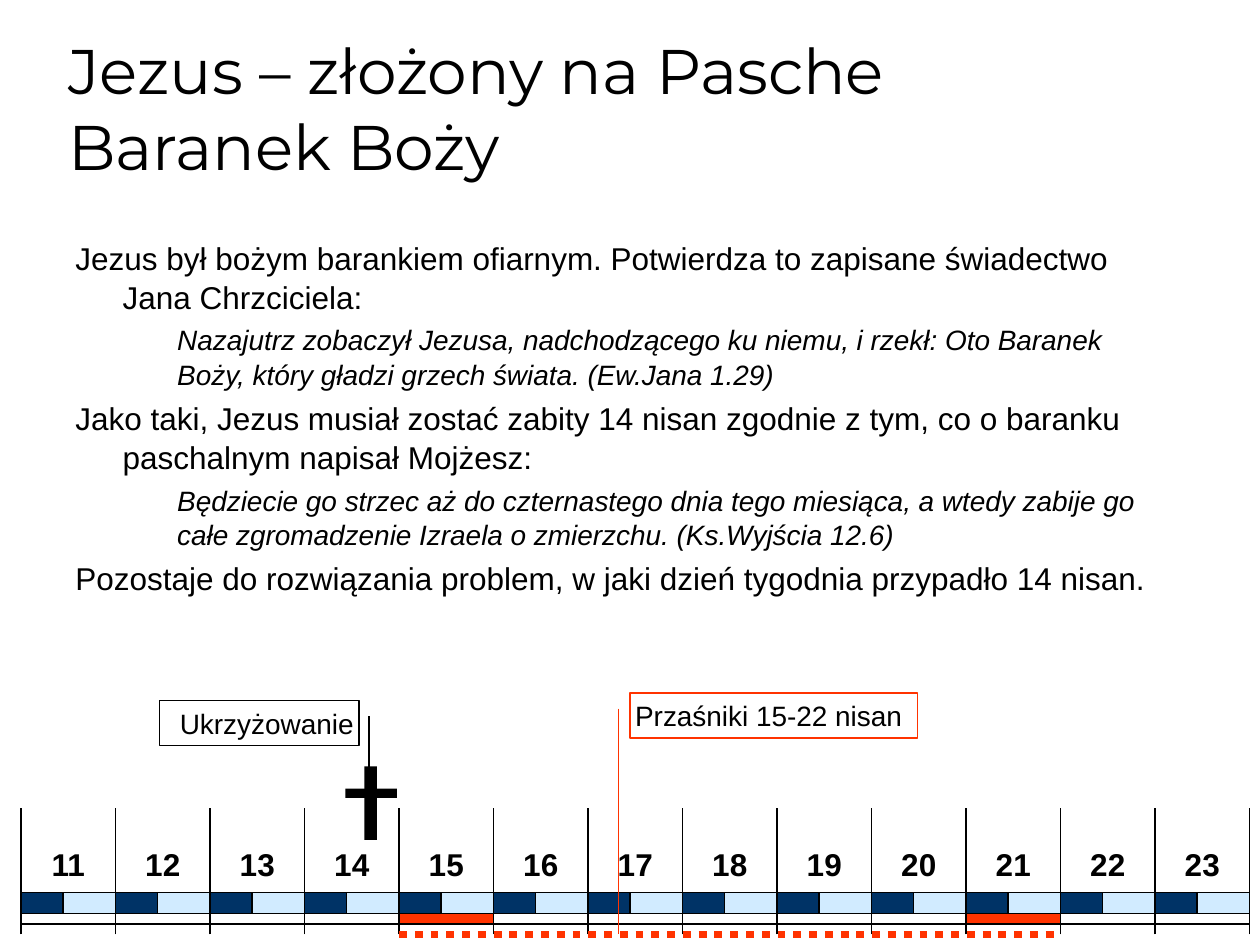
import pptx
import pptx.util
import pptx.dml.color
import pptx.enum.dml
import pptx.enum.shapes
import pptx.enum.text
import pptx.oxml

BLACK = pptx.dml.color.RGBColor(0x00, 0x00, 0x00)
NIGHT = pptx.dml.color.RGBColor(0x00, 0x33, 0x66)
DAYLIGHT = pptx.dml.color.RGBColor(0xD1, 0xEB, 0xFF)
RED = pptx.dml.color.RGBColor(0xFF, 0x33, 0x00)

ALIGN = pptx.enum.text.PP_ALIGN
ANCHOR = pptx.enum.text.MSO_ANCHOR
SHAPE = pptx.enum.shapes.MSO_SHAPE

EMU_PER_PX = 7620  # 120 px to the inch
DAY_WIDTH = 90
NIGHT_WIDTH = 40
CALENDAR_LEFT = 20
CALENDAR_BOTTOM = 890
FIRST_DAY, LAST_DAY = 11, 23
FEAST_START, FEAST_END = 15, 21

TITLE = "Jezus – złożony na Pasche Baranek Boży"
STATEMENTS = [
    ("Jezus był bożym barankiem ofiarnym. Potwierdza to zapisane świadectwo "
     "Jana Chrzciciela:", False),
    ("Nazajutrz zobaczył Jezusa, nadchodzącego ku niemu, i rzekł: Oto Baranek "
     "Boży, który gładzi grzech świata. (Ew.Jana 1.29)", True),
    ("Jako taki, Jezus musiał zostać zabity 14 nisan zgodnie z tym, co o baranku "
     "paschalnym napisał Mojżesz:", False),
    ("Będziecie go strzec aż do czternastego dnia tego miesiąca, a wtedy zabije go "
     "całe zgromadzenie Izraela o zmierzchu. (Ks.Wyjścia 12.6)", True),
    ("Pozostaje do rozwiązania problem, w jaki dzień tygodnia przypadło 14 nisan.",
     False),
]


def px(length):
    return pptx.util.Emu(length * EMU_PER_PX)


def day_left(day):
    return CALENDAR_LEFT + (day - FIRST_DAY) * DAY_WIDTH


class SlideBuilder:
    """Holds the text style and the slide being filled."""

    def __init__(self, slide, font="Arial", line_width=0.75):
        self.slide = slide
        self.font = font
        self.line_width = pptx.util.Pt(line_width)

    def run(self, paragraph, text, size, font=None, bold=False, italic=False):
        run = paragraph.add_run()
        run.text = text
        run.font.name = font or self.font
        run.font.size = pptx.util.Pt(size)
        run.font.bold = bold
        run.font.italic = italic
        run.font.color.rgb = BLACK

    def title(self, box, text):
        title = self.slide.shapes.title
        title.left, title.top, title.width, title.height = map(px, box)
        frame = title.text_frame
        frame.auto_size = pptx.enum.text.MSO_AUTO_SIZE.NONE
        frame.vertical_anchor = ANCHOR.BOTTOM
        frame.paragraphs[0].alignment = ALIGN.LEFT
        self.run(frame.paragraphs[0], text, 36, font="Montserrat")

    def statements(self, box, items):
        """Main points with a hanging indent, quotations indented in italics."""
        frame = self.slide.shapes.add_textbox(*map(px, box)).text_frame
        frame.word_wrap = True
        for index, (text, is_quote) in enumerate(items):
            paragraph = frame.add_paragraph() if index else frame.paragraphs[0]
            size = 16 if is_quote else 18
            margin, indent = (97, 0) if is_quote else (45, -45)
            properties = paragraph._p.get_or_add_pPr()
            properties.set("marL", str(px(margin)))
            properties.set("indent", str(px(indent)))
            paragraph.line_spacing = 1.04
            if index:
                paragraph.space_before = pptx.util.Pt(size * 0.2)
            self.run(paragraph, text, size, italic=is_quote)

    def shape(self, box, kind=SHAPE.RECTANGLE, fill=None, line=BLACK, parent=None):
        shapes = (parent or self.slide).shapes
        shape = shapes.add_shape(kind, *map(px, box))
        shape.shadow.inherit = False
        if fill is None:
            shape.fill.background()
        else:
            shape.fill.solid()
            shape.fill.fore_color.rgb = fill
        if line is None:
            shape.line.fill.background()
        else:
            shape.line.color.rgb = line
            shape.line.width = self.line_width
        return shape

    def group(self):
        return self.slide.shapes.add_group_shape()

    def callout(self, box, text, color, pointer, align):
        """Mirrored box whose pointer is start y, x and end y, x as fractions."""
        shape = self.shape(box, SHAPE.LINE_CALLOUT_1, line=color)
        shape._element.spPr.xfrm.set("flipH", "1")
        for index, value in enumerate(pointer):
            shape.adjustments[index] = value
        frame = shape.text_frame
        frame.word_wrap = True
        frame.vertical_anchor = ANCHOR.MIDDLE
        frame.margin_left = frame.margin_right = px(5)
        frame.margin_top = frame.margin_bottom = px(5)
        frame.paragraphs[0].alignment = align
        self.run(frame.paragraphs[0], text, 16)

    def day_label(self, box, text):
        frame = self.slide.shapes.add_textbox(*map(px, box)).text_frame
        frame.word_wrap = False
        frame.vertical_anchor = ANCHOR.MIDDLE
        frame.margin_bottom = px(40)
        frame.paragraphs[0].alignment = ALIGN.CENTER
        self.run(frame.paragraphs[0], text, 18, bold=True)

    def line(self, start, end, color=BLACK, width=None, dash=None):
        connector = self.slide.shapes.add_connector(
            pptx.enum.shapes.MSO_CONNECTOR.STRAIGHT, *map(px, start + end))
        connector.line.color.rgb = color
        connector.line.width = pptx.util.Pt(width) if width else self.line_width
        if dash:
            connector.line.dash_style = dash
        connector._element.spPr.append(pptx.oxml.parse_xml(
            '<a:effectLst xmlns:a='
            '"http://schemas.openxmlformats.org/drawingml/2006/main"/>'))


def draw_calendar(builder):
    days = range(FIRST_DAY, LAST_DAY + 1)
    for day in days:
        left = day_left(day)
        halves = builder.group()
        builder.shape((left, 850, NIGHT_WIDTH, 20), fill=NIGHT, parent=halves)
        builder.shape((left + NIGHT_WIDTH, 850, DAY_WIDTH - NIGHT_WIDTH, 20),
                      fill=DAYLIGHT, parent=halves)
        builder.day_label((left, 790, DAY_WIDTH, 100), str(day))
    for day in range(FIRST_DAY, LAST_DAY + 2):
        builder.line((day_left(day), CALENDAR_BOTTOM), (day_left(day), 770))
    for day in days:
        holy = day in (FEAST_START, FEAST_END)
        builder.shape((day_left(day), 870, DAY_WIDTH, 10), fill=RED if holy else None)


def draw_cross(builder):
    cross = builder.group()
    for beam in ((347, 730, 12, 70), (329, 751, 49, 9)):
        builder.shape(beam, fill=BLACK, line=None, parent=cross)


def main():
    presentation = pptx.Presentation()
    presentation.slide_width, presentation.slide_height = px(1200), px(900)
    slide = presentation.slides.add_slide(presentation.slide_layouts[5])
    builder = SlideBuilder(slide)

    builder.title((53, 30, 1020, 150), TITLE)
    builder.statements((60, 220, 1073, 380), STATEMENTS)
    builder.callout((152, 667, 190, 43), "Ukrzyżowanie", BLACK,
                    (0.35, -0.05, 2.36, -0.05), ALIGN.RIGHT)
    draw_calendar(builder)
    draw_cross(builder)
    builder.line((day_left(FEAST_START), CALENDAR_BOTTOM),
                 (day_left(FEAST_END + 1), CALENDAR_BOTTOM),
                 RED, 4.5, pptx.enum.dml.MSO_LINE.ROUND_DOT)
    builder.callout((600, 660, 274, 43), "Przaśniki 15-22 nisan", RED,
                    (0.35, 1.04, 5.35, 1.04), ALIGN.LEFT)
    presentation.save("out.pptx")


if __name__ == "__main__":
    main()
